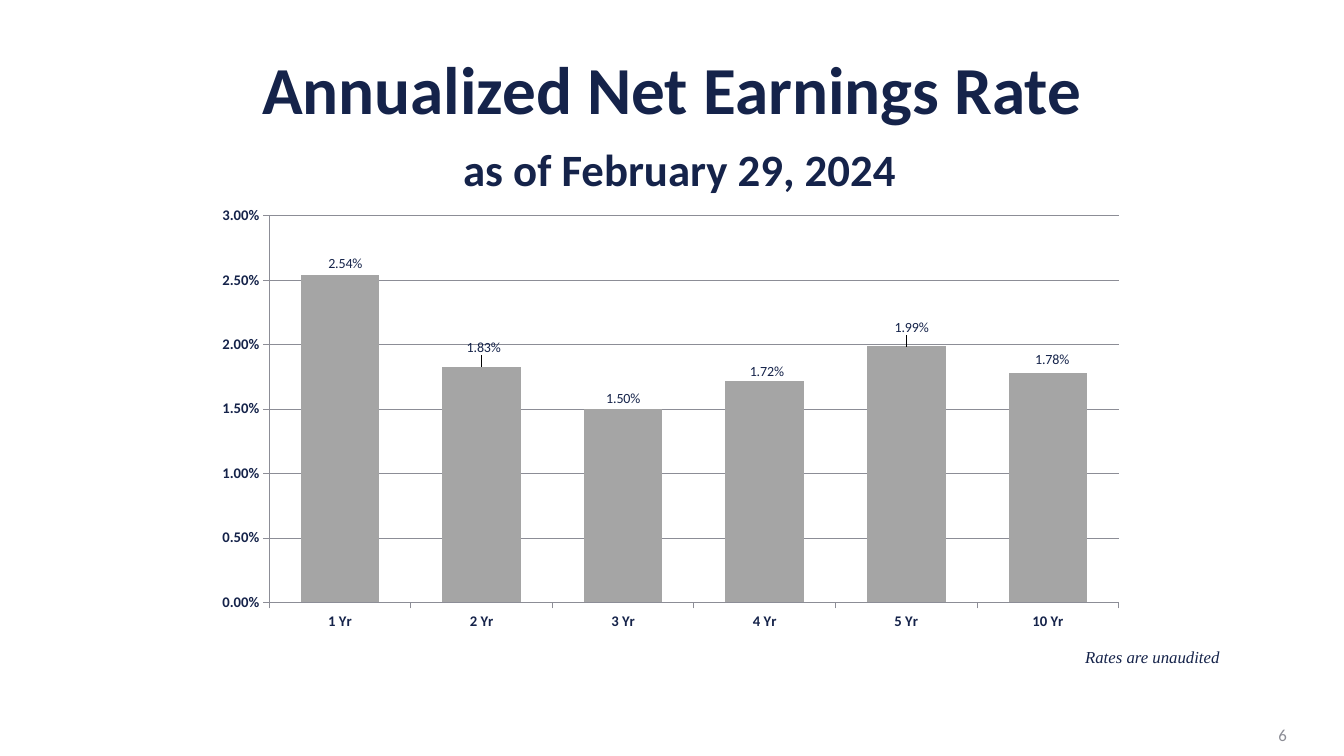
from lxml.etree import SubElement
from pptx import Presentation
from pptx.chart.data import CategoryChartData
from pptx.dml.color import RGBColor
from pptx.enum.chart import XL_CHART_TYPE, XL_LABEL_POSITION, XL_TICK_MARK
from pptx.enum.text import MSO_ANCHOR, MSO_AUTO_SIZE, PP_ALIGN
from pptx.oxml import parse_xml
from pptx.oxml.ns import nsdecls, qn
from pptx.util import Pt

NAVY = RGBColor(0x15, 0x23, 0x4A)
GREY = RGBColor(0x8C, 0x8D, 0x96)
BAR = RGBColor(0xA5, 0xA5, 0xA5)
EMU_PER_PX = 9525
PERCENT = "0.00%"

# Period, rate, and the label's shift right and down in px
RATES = [
    ("1 Yr", 0.0254, 5, 0),
    ("2 Yr", 0.0183, 2, -7),
    ("3 Yr", 0.015, 0, 1),
    ("4 Yr", 0.0172, 2, 3),
    ("5 Yr", 0.0199, 5, -6),
    ("10 Yr", 0.0178, 4, -2),
]


def px(*lengths):
    return [length * EMU_PER_PX for length in lengths]


def style_font(font, size, color=NAVY, name="Calibri", bold=False, italic=False):
    font.size = Pt(size)
    font.name = name
    font.bold = bold
    font.italic = italic
    font.color.rgb = color


def add_span(para, text, **style):
    span = para.add_run()
    span.text = text
    style_font(span.font, **style)


def manual_layout(**settings):
    """Return a chart layout element with the given settings in order."""
    layout = parse_xml(f"<c:layout {nsdecls('c')}><c:manualLayout/></c:layout>")
    for tag, value in settings.items():
        SubElement(layout[0], qn(f"c:{tag}")).set("val", str(value))
    return layout


class SlideBuilder:
    def __init__(self, deck):
        self.page = deck.slides.add_slide(deck.slide_layouts[5])

    def title(self, heading, subheading, bounds):
        box = self.page.shapes.title
        box.left, box.top, box.width, box.height = px(*bounds)
        frame = box.text_frame
        frame.word_wrap = True
        frame.auto_size = MSO_AUTO_SIZE.NONE
        frame.vertical_anchor = MSO_ANCHOR.MIDDLE
        para = frame.paragraphs[0]
        para.alignment = PP_ALIGN.CENTER
        para.line_spacing = 0.9
        add_span(para, heading, size=48, bold=True)
        para.add_line_break()
        add_span(para, " ", size=48, bold=True)
        add_span(para, subheading, size=32, bold=True)

    def text(self, words, bounds, align=PP_ALIGN.LEFT, anchor=MSO_ANCHOR.TOP, **style):
        frame = self.page.shapes.add_textbox(*px(*bounds)).text_frame
        frame.word_wrap = True
        frame.vertical_anchor = anchor
        para = frame.paragraphs[0]
        para.alignment = align
        add_span(para, words, size=12, **style)

    def column_chart(self, rates, bounds):
        data = CategoryChartData(number_format=PERCENT)
        data.categories = [period for period, *_ in rates]
        data.add_series("Series 1", [rate for _, rate, *_ in rates])
        chart = self.page.shapes.add_chart(
            XL_CHART_TYPE.COLUMN_CLUSTERED, *px(*bounds), data).chart
        chart.has_legend = False
        chart.has_title = False
        style_font(chart.font, 18)

        for axis in (chart.category_axis, chart.value_axis):
            axis.major_tick_mark = XL_TICK_MARK.OUTSIDE
            axis.minor_tick_mark = XL_TICK_MARK.NONE
            axis.format.line.color.rgb = GREY
            axis.format.line.width = Pt(0.75)
            style_font(axis.tick_labels.font, 10.5, bold=True)
        values = chart.value_axis
        values.minimum_scale, values.maximum_scale = 0, 0.03
        values.major_unit = 0.005
        values.tick_labels.number_format = PERCENT
        values.tick_labels.number_format_is_linked = False
        values.has_major_gridlines = True
        values.major_gridlines.format.line.color.rgb = GREY
        values.major_gridlines.format.line.width = Pt(0.75)

        plot = chart.plots[0]
        plot.gap_width = 80
        plot.vary_by_categories = False
        series = plot.series[0]
        series.format.fill.solid()
        series.format.fill.fore_color.rgb = BAR
        self.rate_labels(chart, series, rates, bounds)

        area = chart._chartSpace.find(f".//{qn('c:plotArea')}")
        for layout in area.findall(qn("c:layout")):
            area.remove(layout)
        area.insert(0, manual_layout(layoutTarget="inner", xMode="edge", yMode="edge",
                                     x=0.065, y=0.031, w=0.931, h=0.833))

    def rate_labels(self, chart, series, rates, bounds):
        labels = series.data_labels
        labels.show_value = True
        labels.number_format = PERCENT
        labels.number_format_is_linked = False
        labels.position = XL_LABEL_POSITION.OUTSIDE_END
        style_font(labels.font, 10)
        for index in range(len(rates)):
            label = series.points[index].data_label
            style_font(label.font, 10)
            label.position = XL_LABEL_POSITION.OUTSIDE_END
        _, _, width, height = bounds
        elements = chart._chartSpace.iter(qn("c:dLbl"))
        for element, (_, _, right, down) in zip(list(elements), rates):
            element.insert(1, manual_layout(x=round(right / width, 4),
                                            y=round(down / height, 4)))
            element.insert(2, parse_xml(
                f'<c:numFmt {nsdecls("c")} formatCode="{PERCENT}" sourceLinked="0"/>'))


def main():
    deck = Presentation()
    deck.slide_width, deck.slide_height = px(1280, 720)
    builder = SlideBuilder(deck)
    builder.title("Annualized Net Earnings Rate", "as of February 29, 2024",
                  (64, 80, 1152, 85))
    builder.column_chart(RATES, (200, 192, 869, 442))
    builder.text("6", (947, 681, 288, 38), align=PP_ALIGN.RIGHT,
                 anchor=MSO_ANCHOR.MIDDLE, color=GREY)
    builder.text("Rates are unaudited", (1024, 611, 224, 29),
                 name="Times New Roman", italic=True)
    deck.save("out.pptx")


if __name__ == "__main__":
    main()
